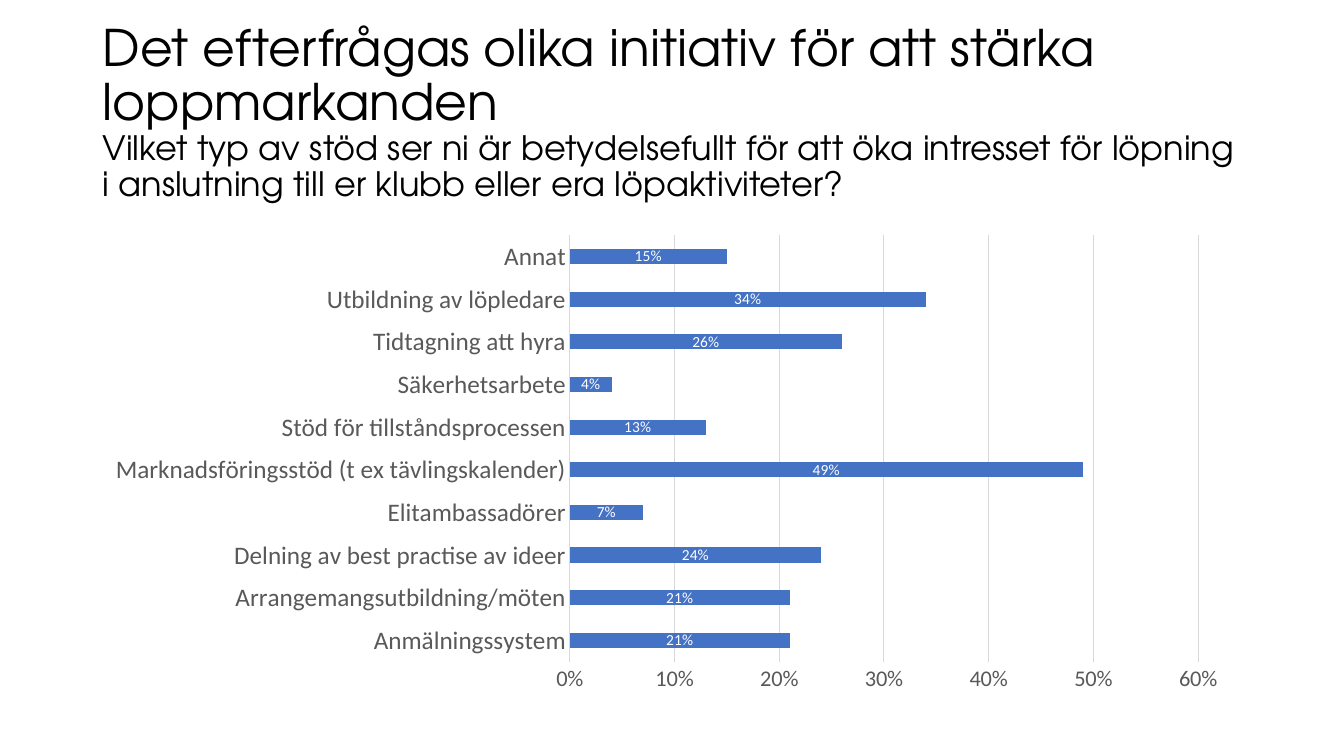
from pptx import Presentation
from pptx.chart.data import CategoryChartData
from pptx.dml.color import RGBColor
from pptx.enum.chart import XL_CHART_TYPE, XL_LABEL_POSITION, XL_TICK_MARK
from pptx.enum.text import MSO_ANCHOR
from pptx.util import Inches, Pt

HEADLINE = "Det efterfrågas olika initiativ för att stärka loppmarkanden"
QUESTION = ("Vilket typ av stöd ser ni är betydelsefullt för att öka intresset "
            "för löpning i anslutning till er klubb eller era löpaktiviteter?")
SUPPORT_SHARES = {
    "Anmälningssystem": 0.21,
    "Arrangemangsutbildning/möten": 0.21,
    "Delning av best practise av ideer": 0.24,
    "Elitambassadörer": 0.07,
    "Marknadsföringsstöd (t ex tävlingskalender)": 0.49,
    "Stöd för tillståndsprocessen": 0.13,
    "Säkerhetsarbete": 0.04,
    "Tidtagning att hyra": 0.26,
    "Utbildning av löpledare": 0.34,
    "Annat": 0.15,
}
THEME = {
    "title_font": "TeX Gyre Adventor", "chart_font": "Calibri",
    "ink": "000000", "axis": "595959", "grid": "D9D9D9",
    "bar": "4472C4", "label": "FFFFFF",
    "headline_size": 36, "question_size": 24, "category_size": 18,
    "scale_size": 16, "label_size": 11, "chart_size": 10,
}
TITLE_BOX = (0.92, 0.4, 11.5, 1.45)
CHART_BOX = (0.92, 2.24, 11.38, 4.73)
PERCENT = "0%"


def inches(box):
    return [Inches(length) for length in box]


def style_font(font, size, color, family):
    font.size = Pt(THEME[size])
    font.color.rgb = RGBColor.from_string(THEME[color])
    font.name = THEME[family]


def style_line(line):
    line.color.rgb = RGBColor.from_string(THEME["grid"])
    line.width = Pt(0.75)


def add_text(slide, box, lines, color, family, spacing):
    """Add one paragraph; lines holds (text, size key) pairs split by line breaks."""
    frame = slide.shapes.add_textbox(*inches(box)).text_frame
    frame.word_wrap = True
    frame.vertical_anchor = MSO_ANCHOR.MIDDLE
    paragraph = frame.paragraphs[0]
    paragraph.line_spacing = spacing
    for index, (text, size) in enumerate(lines):
        if index:
            paragraph.add_line_break()
        run = paragraph.add_run()
        run.text = text
        style_font(run.font, size, color, family)


def add_support_chart(slide):
    shares = CategoryChartData(number_format=PERCENT)
    shares.categories = list(SUPPORT_SHARES)
    shares.add_series("Series 1", list(SUPPORT_SHARES.values()))
    chart = slide.shapes.add_chart(
        XL_CHART_TYPE.BAR_CLUSTERED, *inches(CHART_BOX), shares).chart
    chart.has_legend = False
    chart.has_title = False
    style_font(chart.font, "chart_size", "ink", "chart_font")

    for axis, size in ((chart.category_axis, "category_size"),
                       (chart.value_axis, "scale_size")):
        axis.major_tick_mark = axis.minor_tick_mark = XL_TICK_MARK.NONE
        style_font(axis.tick_labels.font, size, "axis", "chart_font")
    style_line(chart.category_axis.format.line)

    scale = chart.value_axis
    scale.minimum_scale, scale.maximum_scale, scale.major_unit = 0, 0.6, 0.1
    scale.tick_labels.number_format = PERCENT
    scale.tick_labels.number_format_is_linked = False
    scale.format.line.fill.background()
    scale.has_major_gridlines = True
    style_line(scale.major_gridlines.format.line)

    plot = chart.plots[0]
    plot.gap_width = 182
    plot.vary_by_categories = False
    bars = plot.series[0]
    bars.format.fill.solid()
    bars.format.fill.fore_color.rgb = RGBColor.from_string(THEME["bar"])
    labels = bars.data_labels
    labels.show_value = True
    labels.position = XL_LABEL_POSITION.CENTER
    labels.number_format = PERCENT
    labels.number_format_is_linked = False
    style_font(labels.font, "label_size", "label", "chart_font")


def main():
    deck = Presentation()
    deck.slide_width, deck.slide_height = Inches(13.33), Inches(7.5)
    slide = deck.slides.add_slide(deck.slide_layouts[6])
    add_support_chart(slide)
    add_text(slide, TITLE_BOX,
             [(HEADLINE, "headline_size"), (QUESTION, "question_size")],
             color="ink", family="title_font", spacing=0.9)
    deck.save("out.pptx")


if __name__ == "__main__":
    main()
